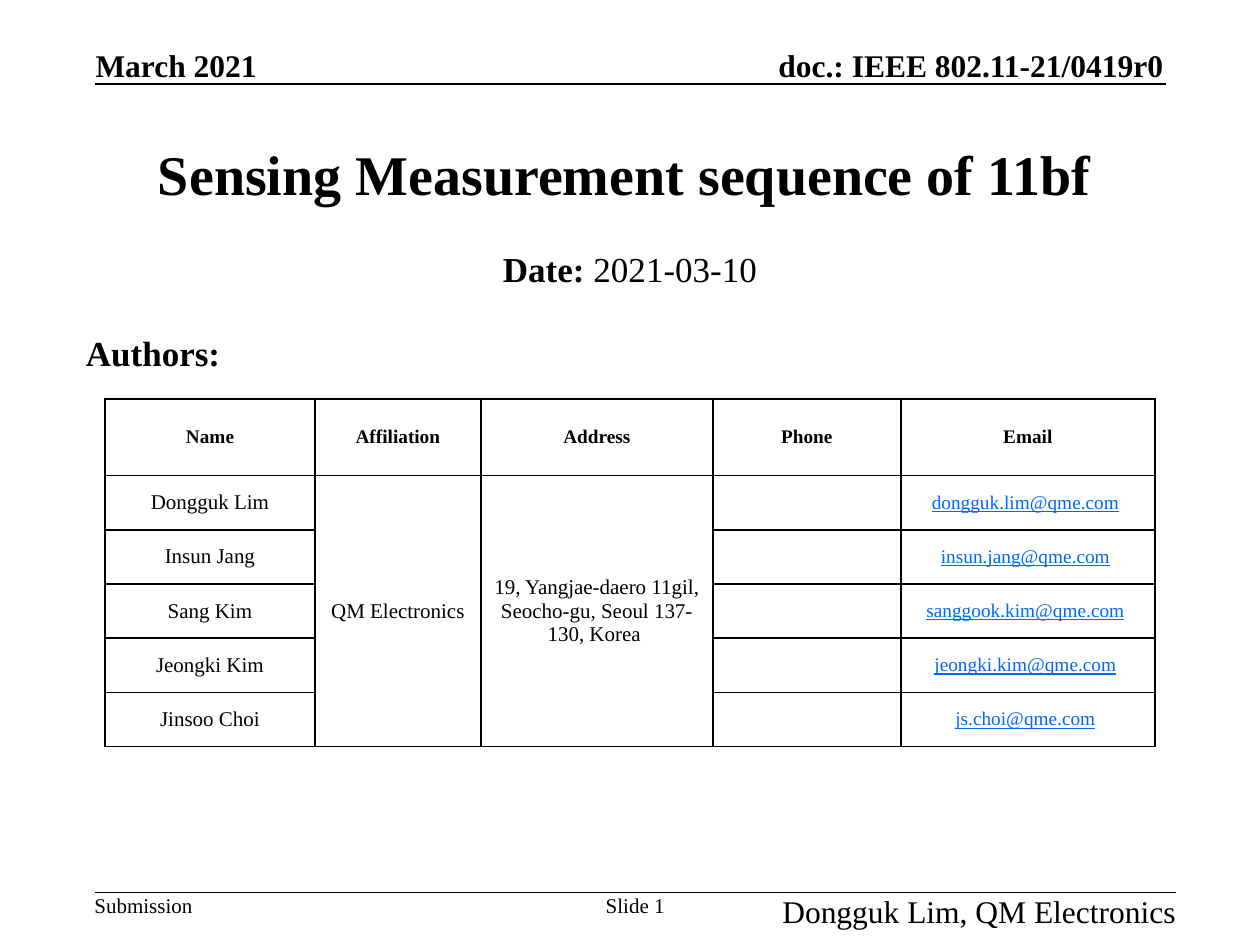
from typing import NamedTuple

from lxml import etree
from pptx import Presentation
from pptx.dml.color import RGBColor
from pptx.enum.shapes import MSO_CONNECTOR
from pptx.enum.text import MSO_ANCHOR, MSO_AUTO_SIZE, PP_ALIGN
from pptx.oxml.ns import qn
from pptx.util import Inches, Pt

LEFT, CENTER, RIGHT = PP_ALIGN.LEFT, PP_ALIGN.CENTER, PP_ALIGN.RIGHT
TOP, MIDDLE, BOTTOM = MSO_ANCHOR.TOP, MSO_ANCHOR.MIDDLE, MSO_ANCHOR.BOTTOM
STRAIGHT = MSO_CONNECTOR.STRAIGHT
NO_FIT, GROW = MSO_AUTO_SIZE.NONE, MSO_AUTO_SIZE.SHAPE_TO_FIT_TEXT

FONT = "Times New Roman"
COLORS = {"ink": "000000", "email": "0066FF"}
HEADER_LINE, FOOTER_LINE = 8, 85
COLUMN_WIDTHS = [20, 15.8, 22.1, 17.9, 24.2]
HEADER_HEIGHT, ROW_HEIGHT = 7.3, 5.16
HEADINGS = ["Name", "Affiliation", "Address", "Phone", "Email"]
AFFILIATION = "QM Electronics"
ADDRESS = "19, Yangjae-daero 11gil, Seocho-gu, Seoul 137-130, Korea "


class Area(NamedTuple):
    left: float
    top: float
    width: float
    height: float


class Span(NamedTuple):
    text: str
    size: int
    bold: bool = False
    color: str = "ink"
    underline: bool = False


class Label(NamedTuple):
    area: Area
    span: Span
    align: PP_ALIGN = LEFT
    anchor: MSO_ANCHOR = TOP


class Author(NamedTuple):
    name: str
    email: str


LABELS = [
    Label(Area(9.1, 4.4, 15.5, 3.6), Span("March 2021", 18, True), LEFT, BOTTOM),
    Label(Area(67.8, 4.4, 43, 3.6), Span("doc.: IEEE 802.11-21/0419r0", 18, True), RIGHT, BOTTOM),
    Label(Area(9, FOOTER_LINE, 9.4, 2.4), Span("Submission", 12)),
    Label(Area(57, FOOTER_LINE, 7, 2.4), Span("Slide 1", 12), CENTER),
    Label(Area(74, FOOTER_LINE, 38, 3.6), Span("Dongguk Lim, " + AFFILIATION, 18), RIGHT),
]
AUTHORS = [
    Author("Dongguk Lim", "dongguk.lim@qme.com"),
    Author("Insun Jang", "insun.jang@qme.com"),
    Author("Sang Kim", "sanggook.kim@qme.com"),
    Author("Jeongki Kim", "jeongki.kim@qme.com"),
    Author("Jinsoo Choi", "js.choi@qme.com"),
]


def grid(units: float) -> int:
    """Length on a grid of 120 columns by 90 rows, twelve to the inch."""
    return Inches(units / 12)


def write(frame, spans: list[Span], align: PP_ALIGN, anchor: MSO_ANCHOR) -> None:
    frame.vertical_anchor = anchor
    para = frame.paragraphs[0]
    para.alignment = align
    for span in spans:
        run = para.add_run()
        run.text = span.text
        font = run.font
        font.name, font.size = FONT, Pt(span.size)
        font.bold, font.underline = span.bold, span.underline
        font.color.rgb = RGBColor.from_string(COLORS[span.color])


def add_label(page, label: Label) -> None:
    frame = page.shapes.add_textbox(*map(grid, label.area)).text_frame
    frame.margin_left = frame.margin_right = frame.margin_top = frame.margin_bottom = 0
    frame.word_wrap = False
    frame.auto_size = GROW
    write(frame, [label.span], label.align, label.anchor)


def fill_placeholder(box, area: Area, spans: list[Span], anchor: MSO_ANCHOR) -> None:
    box.left, box.top, box.width, box.height = map(grid, area)
    box.text_frame.auto_size = NO_FIT
    write(box.text_frame, spans, CENTER, anchor)


def add_rule(page, left: float, right: float, top: float) -> None:
    rule = page.shapes.add_connector(STRAIGHT, grid(left), grid(top), grid(right), grid(top))
    rule.line.color.rgb = RGBColor.from_string(COLORS["ink"])
    rule.line.width = Pt(1)
    etree.SubElement(rule._element.spPr, qn("a:effectLst"))


def style_cell(cell) -> None:
    """Black one-point borders and no fill."""
    properties = cell._tc.get_or_add_tcPr()
    for side in ("a:lnL", "a:lnR", "a:lnT", "a:lnB"):
        border = etree.SubElement(properties, qn(side), w=str(Pt(1)))
        fill = etree.SubElement(border, qn("a:solidFill"))
        etree.SubElement(fill, qn("a:srgbClr"), val=COLORS["ink"])
    cell.fill.background()


def fill_cell(cell, *spans: Span) -> None:
    cell.margin_left = cell.margin_right = Inches(0.07)
    cell.margin_top = cell.margin_bottom = 0
    write(cell.text_frame, list(spans), CENTER, MIDDLE)
    cell.vertical_anchor = MIDDLE


def add_author_table(page) -> None:
    heights = [HEADER_HEIGHT] + [ROW_HEIGHT] * len(AUTHORS)
    area = Area(10, 38, sum(COLUMN_WIDTHS), sum(heights))
    table = page.shapes.add_table(len(heights), len(HEADINGS), *map(grid, area)).table
    table.first_row = table.horz_banding = False
    for column, width in zip(table.columns, COLUMN_WIDTHS):
        column.width = grid(width)
    for row, height in zip(table.rows, heights):
        row.height = grid(height)
    for cell in table.iter_cells():
        style_cell(cell)

    for column, heading in enumerate(HEADINGS):
        fill_cell(table.cell(0, column), Span(heading, 11, True))
    for row, author in enumerate(AUTHORS, start=1):
        fill_cell(table.cell(row, 0), Span(author.name, 12))
        fill_cell(table.cell(row, 4), Span(author.email, 11, False, "email", True), Span(" ", 11))
    for column, text in enumerate([AFFILIATION, ADDRESS], start=1):
        table.cell(1, column).merge(table.cell(len(AUTHORS), column))
        fill_cell(table.cell(1, column), Span(text, 12))


def main() -> None:
    deck = Presentation()
    deck.slide_width, deck.slide_height = grid(120), grid(90)
    page = deck.slides.add_slide(deck.slide_layouts[1])

    title, date = page.placeholders
    fill_placeholder(title, Area(5, 9, 109, 15),
                     [Span("Sensing Measurement sequence of 11bf", 32, True)], MIDDLE)
    fill_placeholder(date, Area(9, 23, 102, 5),
                     [Span("Date: ", 20, True), Span("2021-03-10", 20)], TOP)
    etree.SubElement(date.text_frame.paragraphs[0]._p.get_or_add_pPr(), qn("a:buNone"))

    authors = page.shapes.add_textbox(*map(grid, Area(7, 31, 19, 5))).text_frame
    authors.word_wrap = True
    write(authors, [Span("Authors:", 20, True)], LEFT, TOP)
    authors.paragraphs[0].space_before = Pt(4)

    add_author_table(page)
    add_rule(page, 9, 111, HEADER_LINE)
    add_rule(page, 9, 112, FOOTER_LINE)
    for label in LABELS:
        add_label(page, label)
    deck.save("out.pptx")


if __name__ == "__main__":
    main()
